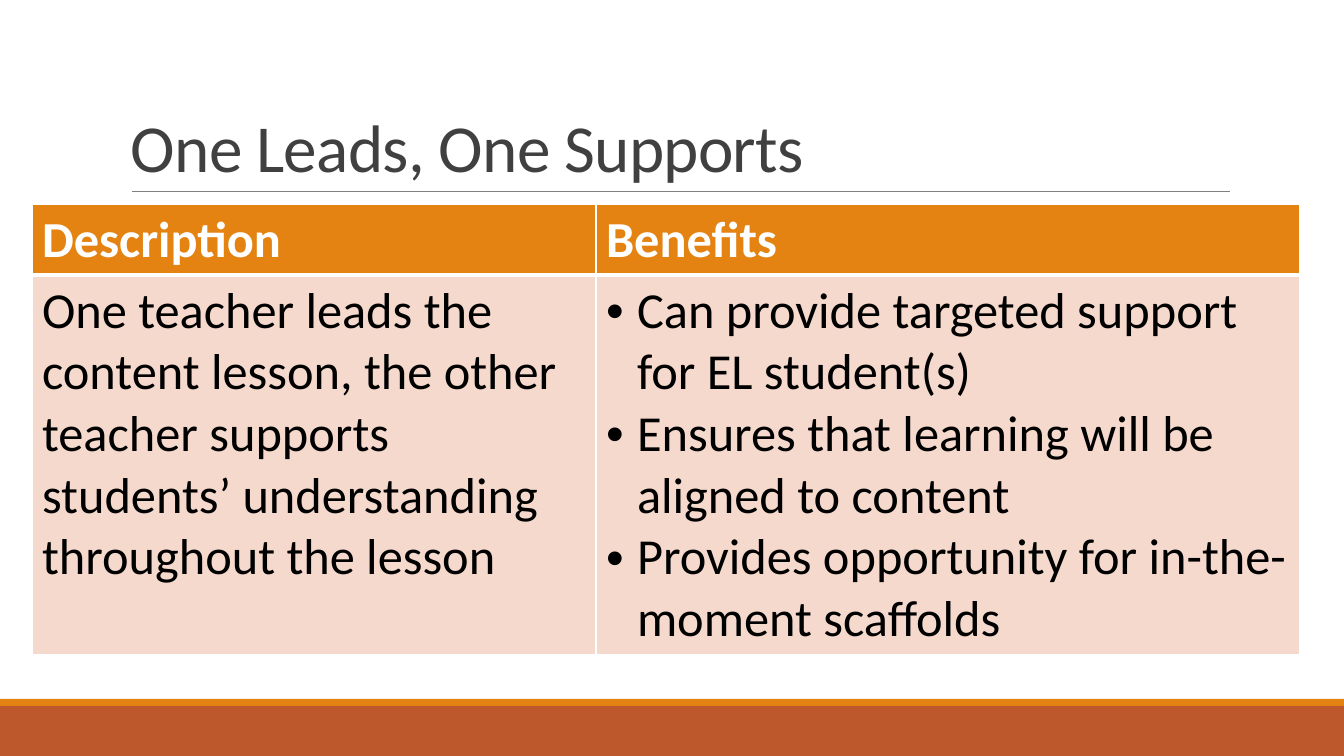
import dataclasses

import pptx
import pptx.dml.color
import pptx.enum.shapes
import pptx.enum.text
import pptx.oxml
import pptx.oxml.ns
import pptx.util

EMU_PER_PX = 914400 / 100.8
SLIDE_WIDTH, SLIDE_HEIGHT = 1344, 756


@dataclasses.dataclass(frozen=True)
class Theme:
    font: str = "Calibri"
    title_size: int = 48
    table_size: int = 36
    orange: str = "E48312"
    rust: str = "BD582C"
    peach: str = "F5D9CC"
    title: str = "404040"
    rule: str = "808080"
    white: str = "FFFFFF"
    black: str = "000000"


THEME = Theme()
HEADINGS = ["Description", "Benefits"]
DESCRIPTION = ("One teacher leads the content lesson, the other teacher supports "
               "students’ understanding throughout the lesson")
BENEFITS = [
    "Can provide targeted support for EL student(s)",
    "Ensures that learning will be aligned to content",
    "Provides opportunity for in-the-moment scaffolds",
]


def px(*lengths):
    return [pptx.util.Emu(round(length * EMU_PER_PX)) for length in lengths]


def rgb(value):
    return pptx.dml.color.RGBColor.from_string(value)


def set_attributes(target, values):
    for name, value in values.items():
        setattr(target, name, value)


def paint(target, color):
    target.fill.solid()
    target.fill.fore_color.rgb = rgb(color)


def write(paragraph, text, size, color, bold=False):
    run = paragraph.add_run()
    run.text = text
    set_attributes(run.font, {"name": THEME.font, "size": pptx.util.Pt(size), "bold": bold})
    run.font.color.rgb = rgb(color)
    return run


def add_bar(slide, top, height, color):
    bar = slide.shapes.add_shape(pptx.enum.shapes.MSO_SHAPE.RECTANGLE,
                                 *px(0, top, SLIDE_WIDTH, height))
    bar.shadow.inherit = False
    paint(bar, color)
    bar.line.fill.background()


def add_rule(slide, left, right, y):
    rule = slide.shapes.add_connector(pptx.enum.shapes.MSO_CONNECTOR.STRAIGHT,
                                      *px(left, y, right, y))
    rule.line.color.rgb = rgb(THEME.rule)
    rule.line.width = pptx.util.Pt(0.5)
    properties = rule._element.spPr
    properties.append(properties.makeelement(pptx.oxml.ns.qn("a:effectLst"), {}))


def add_title(slide, text):
    box = slide.shapes.add_textbox(*px(121, 31, 1109, 160))
    set_attributes(box.text_frame, {
        "word_wrap": True,
        "vertical_anchor": pptx.enum.text.MSO_ANCHOR.BOTTOM,
    })
    paragraph = box.text_frame.paragraphs[0]
    paragraph.line_spacing = 0.85
    run = write(paragraph, text, THEME.title_size, THEME.title)
    run._r.get_or_add_rPr().set("spc", "-50")


def set_borders(cell, widths):
    properties = cell._tc.get_or_add_tcPr()
    for position, (side, width) in enumerate(widths.items()):
        border = pptx.oxml.parse_xml(
            f'<a:{side} {pptx.oxml.ns.nsdecls("a")} w="{pptx.util.Pt(width)}">'
            f'<a:solidFill><a:srgbClr val="{THEME.white}"/></a:solidFill></a:{side}>')
        properties.insert(position, border)


def add_bullet(paragraph):
    properties = paragraph._p.get_or_add_pPr()
    indent = px(31)[0]
    properties.set("marL", str(indent))
    properties.set("indent", str(-indent))
    properties.append(pptx.oxml.parse_xml(
        f'<a:buFont {pptx.oxml.ns.nsdecls("a")} typeface="Arial"/>'))
    properties.append(pptx.oxml.parse_xml(
        f'<a:buChar {pptx.oxml.ns.nsdecls("a")} char="•"/>'))


def fill_cell(cell, lines, is_header):
    paint(cell, THEME.orange if is_header else THEME.peach)
    set_borders(cell, {"lnL": 1, "lnR": 1,
                       "lnT": 1 if is_header else 3, "lnB": 3 if is_header else 1})
    color = THEME.white if is_header else THEME.black
    frame = cell.text_frame
    for index, line in enumerate(lines):
        paragraph = frame.add_paragraph() if index else frame.paragraphs[0]
        if len(lines) > 1:
            add_bullet(paragraph)
        write(paragraph, line, THEME.table_size, color, is_header)


def add_comparison_table(slide, rows):
    widths, heights = px(564, 704), px(71, 380)
    table = slide.shapes.add_table(len(rows), len(widths), *px(32, 204),
                                   sum(widths), sum(heights)).table
    for column, width in zip(table.columns, widths):
        column.width = width
    for row, height in zip(table.rows, heights):
        row.height = height
    for row_index, row in enumerate(rows):
        for column_index, lines in enumerate(row):
            fill_cell(table.cell(row_index, column_index), lines, row_index == 0)


def main():
    presentation = pptx.Presentation()
    width, height = px(SLIDE_WIDTH, SLIDE_HEIGHT)
    set_attributes(presentation, {"slide_width": width, "slide_height": height})
    slide = presentation.slides.add_slide(presentation.slide_layouts[6])

    # Footer bars
    add_bar(slide, 706, 50, THEME.rust)
    add_bar(slide, 699, 7, THEME.orange)

    # Title and its rule
    add_rule(slide, 132, 1230, 191)
    add_title(slide, "One Leads, One Supports")

    # Description and benefits
    add_comparison_table(slide, [[[heading] for heading in HEADINGS],
                                 [[DESCRIPTION], BENEFITS]])
    presentation.save("out.pptx")


if __name__ == "__main__":
    main()
